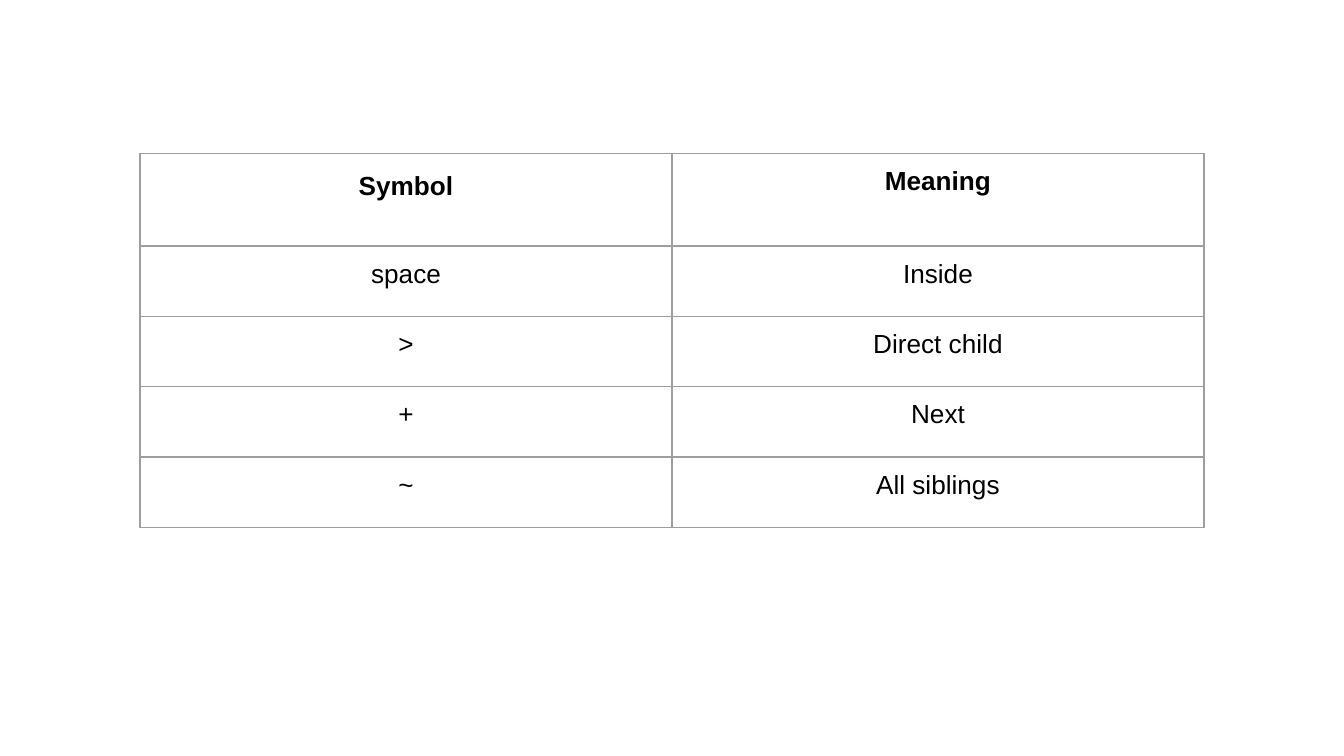
"""Build a slide with a table of CSS combinator symbols and their meanings."""
from dataclasses import dataclass

from lxml import etree
from pptx import Presentation, util as u
from pptx.dml.color import RGBColor
from pptx.enum import text
from pptx.oxml import ns

COLORS = {"ink": "000000", "rule": "9E9E9E"}
FONT = "Arial"
SLIDE_WIDTH = u.Inches(10)
SLIDE_HEIGHT = SLIDE_WIDTH * 9 // 16
LEFT_PERCENT, TOP_PERCENT = 10.42, 20.3
COLUMN_PERCENT = 39.58
HEADER_PERCENT, ROW_PERCENT = 12.24, 9.31
INSET = u.Inches(0.1)
RULE_WIDTH = u.Pt(0.75)


@dataclass(frozen=True)
class Entry:
    symbol: str
    meaning: str
    header: bool = False


ENTRIES = [
    Entry("Symbol", "Meaning", header=True),
    Entry("space", "Inside"),
    Entry(">", "Direct child"),
    Entry("+", "Next"),
    Entry("~", "All siblings"),
]


def across(percent: float) -> int:
    return round(SLIDE_WIDTH * percent / 100)


def down(percent: float) -> int:
    return round(SLIDE_HEIGHT * percent / 100)


def draw_borders(cell) -> None:
    properties = cell._tc.get_or_add_tcPr()
    for side in ("a:lnL", "a:lnR", "a:lnT", "a:lnB"):
        rule = etree.SubElement(properties, ns.qn(side), w=str(RULE_WIDTH))
        fill = etree.SubElement(rule, ns.qn("a:solidFill"))
        etree.SubElement(fill, ns.qn("a:srgbClr"), val=COLORS["rule"])


def draw_cell(cell, wording: str, bold: bool) -> None:
    draw_borders(cell)
    cell.fill.background()
    cell.margin_left = cell.margin_right = INSET
    cell.margin_top = cell.margin_bottom = INSET
    cell.text_frame.text = wording
    paragraph = cell.text_frame.paragraphs[0]
    paragraph.alignment = text.PP_ALIGN.CENTER
    font = paragraph.runs[0].font
    font.name, font.size, font.bold = FONT, u.Pt(14), bold
    font.color.rgb = RGBColor.from_string(COLORS["ink"])


def draw_table(slide, entries: list[Entry]) -> None:
    heights = [down(HEADER_PERCENT if entry.header else ROW_PERCENT)
               for entry in entries]
    table = slide.shapes.add_table(
        len(entries), 2, across(LEFT_PERCENT), down(TOP_PERCENT),
        across(COLUMN_PERCENT) * 2, sum(heights)).table
    table.first_row = table.horz_banding = False
    for column in table.columns:
        column.width = across(COLUMN_PERCENT)
    for row, height, entry in zip(table.rows, heights, entries):
        row.height = height
        for cell, wording in zip(row.cells, (entry.symbol, entry.meaning)):
            draw_cell(cell, wording, entry.header)
    table.cell(0, 0).text_frame.paragraphs[0].line_spacing = 1.15


def main() -> None:
    deck = Presentation()
    deck.slide_width, deck.slide_height = SLIDE_WIDTH, SLIDE_HEIGHT
    slide = deck.slides.add_slide(deck.slide_layouts[6])
    draw_table(slide, ENTRIES)
    deck.save("out.pptx")


if __name__ == "__main__":
    main()
